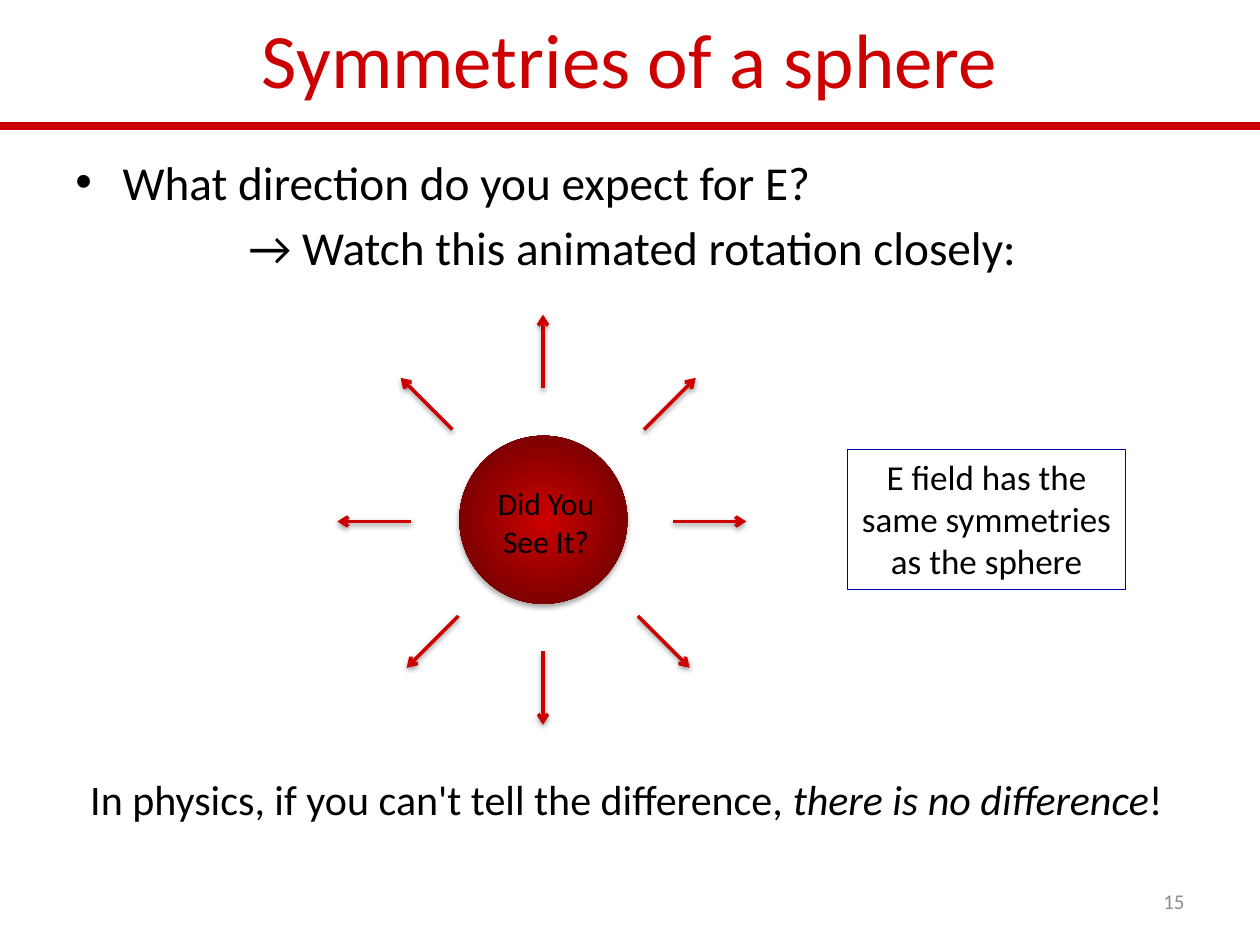
from lxml import etree
from pptx import Presentation
from pptx.dml.color import RGBColor
from pptx.enum.shapes import MSO_CONNECTOR, MSO_SHAPE
from pptx.enum.text import MSO_ANCHOR, PP_ALIGN
from pptx.oxml.ns import qn
from pptx.util import Pt

LEFT, MID, RIGHT = PP_ALIGN.LEFT, PP_ALIGN.CENTER, PP_ALIGN.RIGHT
TOP, CENTER = MSO_ANCHOR.TOP, MSO_ANCHOR.MIDDLE
LINE, OVAL = MSO_CONNECTOR.STRAIGHT, MSO_SHAPE.OVAL
FONT = "Calibri"
HEX = {"red": "CC0000", "dark": "5E0000", "black": "000000",
       "blue": "0000A8", "gray": "8C8C8C"}

# Content: a paragraph is a list of (text, italic) runs
TITLE = [[("Symmetries of a sphere", False)]]
BODY = [[("What direction do you expect for E?", False)],
        [("→ Watch this animated rotation closely:", False)]]
SEEN = [[("Did You", False)], [("See It?", False)]]
FIELD = [[("E field has the", False)], [("same symmetries", False)],
         [("as the sphere", False)]]
MORAL = [[("In physics, if you can't tell the difference, ", False),
          ("there is no difference", True), ("!", False)]]
NUMBER = [[("15", False)]]

# Field arrows: start x, start y, direction
REACH, SLANT = 42, 29.6
ARROWS = [
    (310.3, 221.8, 0, -1), (310.3, 372.2, 0, 1),
    (384.5, 298, 1, 0), (234.8, 298, -1, 0),
    (258.5, 245.5, -1, -1), (364.5, 352, 1, 1),
    (368, 245.5, 1, -1), (262, 352, -1, 1),
]


def color(name):
    return RGBColor.from_string(HEX[name])


def add(parent, tag, **attrs):
    node = etree.SubElement(parent, qn(tag))
    for key, value in attrs.items():
        node.set(key, str(value))
    return node


def write(shape, paras, size=18, ink="black", align=LEFT, anchor=TOP,
          wrap=True, before=0):
    frame = shape.text_frame
    frame.word_wrap = wrap
    frame.vertical_anchor = anchor
    for i, runs in enumerate(paras):
        para = frame.add_paragraph() if i else frame.paragraphs[0]
        para.alignment = align
        para.space_before = Pt(before)
        for text, slant in runs:
            run = para.add_run()
            run.text = text
            run.font.name = FONT
            run.font.size = Pt(size)
            run.font.italic = slant
            run.font.color.rgb = color(ink)
    return shape


def box(x, y, w, h):
    return slide.shapes.add_textbox(Pt(x), Pt(y), Pt(w), Pt(h))


def indent(para, left, hang):
    props = para._p.get_or_add_pPr()
    props.set("marL", str(Pt(left)))
    props.set("indent", str(Pt(-hang)))
    return props


def effect(shape, alpha=0, drop=0):
    """Set a soft shadow below the shape, or none if alpha is 0."""
    group = add(shape._element.spPr, "a:effectLst")
    if alpha:
        glow = add(group, "a:outerShdw", blurRad=Pt(3.1), dist=Pt(drop),
                   dir=90 * 60000, rotWithShape=0)
        tint = add(glow, "a:srgbClr", val=HEX["black"])
        add(tint, "a:alpha", val=alpha * 1000)


def line(x1, y1, x2, y2, width):
    link = slide.shapes.add_connector(LINE, Pt(x1), Pt(y1), Pt(x2), Pt(y2))
    link.line.color.rgb = color("red")
    link.line.width = Pt(width)
    return link


deck = Presentation()
deck.slide_width, deck.slide_height = Pt(720), Pt(540)
slide = deck.slides.add_slide(deck.slide_layouts[5])

# Title and the rule under it
title = slide.shapes.title
title.left, title.top, title.width, title.height = (
    Pt(36), Pt(-12), Pt(648), Pt(90))
write(title, TITLE, size=44, ink="red", align=MID, anchor=CENTER)
effect(line(0, 72, 720, 72, 5))

# Question, with a bullet on its first line
body = write(box(36, 84, 648, 288), BODY, size=27, before=4.5)
first, second = body.text_frame.paragraphs
props = indent(first, 27, 27)
add(props, "a:buFont", typeface="Arial")
add(props, "a:buChar", char="•")
indent(second, 99, 0)

# Sphere, shaded from its centre
ball = slide.shapes.add_shape(OVAL, Pt(262.5), Pt(249), Pt(96), Pt(96))
ball.fill.gradient()
for stop, name in zip(ball.fill.gradient_stops, ("red", "dark")):
    stop.color.rgb = color(name)
grad = ball._element.spPr.find(qn("a:gradFill"))
grad.remove(grad.find(qn("a:lin")))
shade = add(grad, "a:path", path="circle")
add(shade, "a:fillToRect", l=50000, t=50000, r=50000, b=50000)
ball.line.fill.background()
effect(ball, alpha=35, drop=1.8)

# Field arrows
for x, y, dx, dy in ARROWS:
    step = SLANT if dx and dy else REACH
    arrow = line(x, y, x + dx * step, y + dy * step, 2)
    add(arrow.line._get_or_add_ln(), "a:tailEnd", type="arrow")
    effect(arrow, alpha=38, drop=1.6)

# Labels and closing remark
write(box(44.5, 438.5, 633.5, 65.5), MORAL, size=24, wrap=False)
field = write(box(484.5, 257, 158.5, 80), FIELD, size=20, align=MID,
              wrap=False)
field.line.color.rgb = color("blue")
field.line.width = Pt(0.75)
write(box(277, 273, 70, 51), SEEN, align=MID, wrap=False)
write(box(516, 500.5, 168, 28.5), NUMBER, size=12, ink="gray",
      align=RIGHT, anchor=CENTER)

deck.save("out.pptx")
